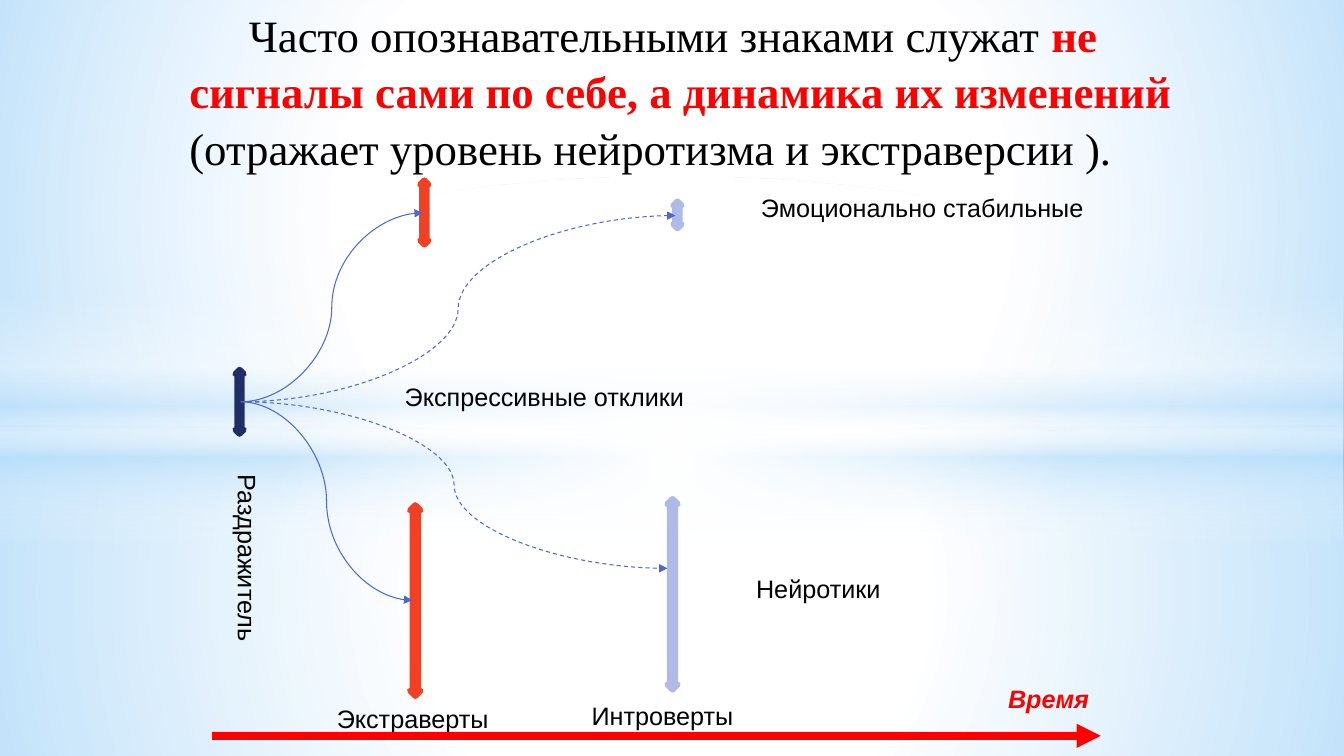
from lxml import etree
from pptx import Presentation
from pptx.dml.color import RGBColor
from pptx.enum import dml, shapes, text
from pptx.oxml import ns
from pptx.util import Pt

COLORS = {
    "white": "FFFFFF", "sky": "B4DCFA", "black": "000000", "red": "FF0000",
    "navy": "1F2E69", "orange": "F14124", "lavender": "AFBBE6",
    "curve": "4E67C8", "cyan": "00B0F0",
}
LABEL_FORMAT = {"name": "Arial", "size": Pt(18), "bold": False, "italic": False}
TITLE_FORMAT = {"name": "Times New Roman", "size": Pt(32), "bold": False}
CENTER = '<a:path path="circle"><a:fillToRect l="50000" t="50000" r="50000" b="50000"/></a:path>'
VERTICAL = '<a:lin ang="5400000" scaled="1"/>'


def rgb(color):
    return RGBColor.from_string(COLORS[color])


def format_font(font, color, values):
    for attribute, value in values.items():
        setattr(font, attribute, value)
    font.color.rgb = rgb(color)


def add_glow(slide, kind, box, stops, direction):
    """Add a backdrop shape; stops are (position %, color, opacity %)."""
    glow = slide.shapes.add_shape(kind, *map(Pt, box))
    glow.shadow.inherit = False
    glow.line.fill.background()
    marks = "".join(
        f'<a:gs pos="{position * 1000}"><a:srgbClr val="{COLORS[color]}">'
        f'<a:alpha val="{opacity * 1000}"/></a:srgbClr></a:gs>'
        for position, color, opacity in stops)
    gradient = etree.fromstring(
        f'<a:gradFill {ns.nsdecls("a")} rotWithShape="1">'
        f'<a:gsLst>{marks}</a:gsLst>{direction}</a:gradFill>')
    glow._element.spPr.find(ns.qn("a:prstGeom")).addnext(gradient)


def add_backdrop(slide):
    rectangle, oval = shapes.MSO_SHAPE.RECTANGLE, shapes.MSO_SHAPE.OVAL
    add_glow(slide, rectangle, (0, 304.5, 960, 235.5),
             [(0, "white", 91), (37, "white", 76), (100, "sky", 79)], CENTER)
    add_glow(slide, rectangle, (0, 0, 960, 304.5),
             [(0, "white", 89), (48, "white", 62), (100, "sky", 79)], CENTER)
    add_glow(slide, rectangle, (0, 209, 960, 180),
             [(0, "white", 0), (29, "white", 30), (45, "sky", 40),
              (55, "white", 26), (65, "sky", 60), (100, "white", 0)], VERTICAL)
    add_glow(slide, oval, (0, 126, 960, 401.5),
             [(0, "white", 100), (54, "white", 0)], CENTER)


def fill_title(slide, box, runs):
    title = slide.shapes.title
    slide.shapes._spTree.append(title._element)  # in front of the backdrop
    title.left, title.top, title.width, title.height = map(Pt, box)
    frame = title.text_frame
    frame.vertical_anchor = text.MSO_ANCHOR.TOP
    frame.auto_size = text.MSO_AUTO_SIZE.NONE
    frame.word_wrap = True
    paragraph = frame.paragraphs[0]
    paragraph.alignment = text.PP_ALIGN.LEFT
    paragraph.line_spacing = 1.05
    paragraph._p.get_or_add_pPr().set("indent", str(Pt(42.5)))
    for wording, color, bold in runs:
        run = paragraph.add_run()
        run.text = wording
        format_font(run.font, color, {**TITLE_FORMAT, "bold": bold})


def add_level(slide, box, color, fill="cyan"):
    level = slide.shapes.add_shape(shapes.MSO_SHAPE.UP_DOWN_ARROW, *map(Pt, box))
    level.shadow.inherit = False
    if fill:
        level.fill.solid()
        level.fill.fore_color.rgb = rgb(fill)
    else:
        level.fill.background()
    level.line.color.rgb = rgb(color)
    level.line.width = Pt(4.5)


def add_arrow(slide, kind, start, end, color, width, dashed=False):
    arrow = slide.shapes.add_connector(kind, *map(Pt, start + end))
    arrow.line.color.rgb = rgb(color)
    arrow.line.width = Pt(width)
    if dashed:
        arrow.line.dash_style = dml.MSO_LINE.DASH
    etree.SubElement(arrow.line._get_or_add_ln(), ns.qn("a:tailEnd"), type="triangle")
    etree.SubElement(arrow._element.spPr, ns.qn("a:effectLst"))


def add_label(slide, wording, box, color="black", vertical=False, **changes):
    label = slide.shapes.add_textbox(*map(Pt, box))
    frame = label.text_frame
    frame.word_wrap = True
    if vertical:
        frame._txBody.bodyPr.set("vert", "vert")
    run = frame.paragraphs[0].add_run()
    run.text = wording
    format_font(run.font, color, {**LABEL_FORMAT, **changes})


def main():
    deck = Presentation()
    deck.slide_width, deck.slide_height = Pt(960), Pt(540)
    slide = deck.slides.add_slide(deck.slide_layouts[5])
    slide.background.fill.solid()
    slide.background.fill.fore_color.rgb = rgb("white")

    add_backdrop(slide)
    fill_title(slide, (128, 0, 786, 124), [
        ("Часто опознавательными знаками служат ", "black", False),
        ("не сигналы сами по себе, а динамика их изменений ", "red", True),
        ("(отражает уровень нейротизма и экстраверсии ).", "black", False),
    ])

    # Stimulus and response levels
    add_level(slide, (168.25, 264.25, 5.75, 45.5), "navy")
    add_level(slide, (293, 361, 7.25, 136), "orange")
    add_level(slide, (300.25, 129, 5.75, 45.5), "orange")
    add_level(slide, (476.75, 356.5, 7.25, 136), "lavender")
    add_level(slide, (481, 144, 5.75, 19), "lavender", fill=None)

    # Curves from the stimulus to each response
    stimulus = (172, 287)
    for response, dashed in [((302, 152), False), ((294.5, 428.75), False),
                             ((482.5, 154), True), ((476.75, 406), True)]:
        add_arrow(slide, shapes.MSO_CONNECTOR.CURVE, stimulus, response,
                  "curve", 0.75, dashed)

    # Labels
    for wording, box in [
        ("Эмоционально стабильные", (536.5, 134, 266, 29)),
        ("Нейротики", (533, 406, 266, 29)),
        ("Интроверты", (415.5, 497, 130, 29)),
        ("Экспрессивные отклики", (282, 268.5, 266, 29)),
        ("Экстраверты", (233.5, 499, 130, 29)),
    ]:
        add_label(slide, wording, box)
    add_label(slide, "Раздражитель", (155.5, 332, 36, 138), vertical=True)

    # Time axis
    add_arrow(slide, shapes.MSO_CONNECTOR.STRAIGHT, (151.25, 525.6), (786.25, 525.6),
              "red", 5.75)
    add_label(slide, "Время", (713, 484.5, 102, 29), "red", bold=True, italic=True)

    deck.save("out.pptx")


if __name__ == "__main__":
    main()
